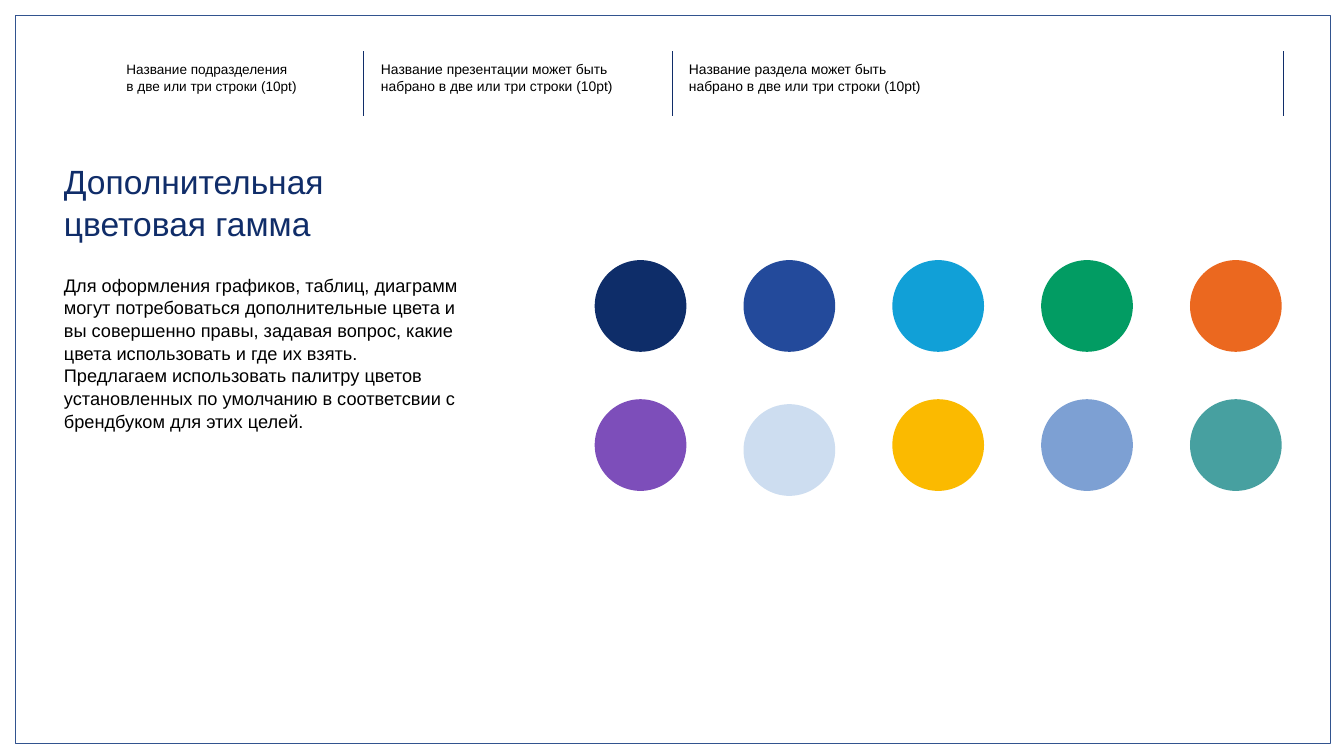
"""Build the slide that shows the extra colour palette."""
from pptx import Presentation
from pptx.dml.color import RGBColor
from pptx.enum.shapes import MSO_CONNECTOR as Link, MSO_SHAPE as Kind
from pptx.oxml.ns import qn
from pptx.util import Cm, Pt
from lxml.etree import SubElement

HUES = {
    "white": "FFFFFF", "black": "000000", "frame": "32538F", "ink": "102D69",
    "navy": "0E2D69", "blue": "234A9B", "sky": "11A0D7", "green": "029C63",
    "orange": "EB681F", "purple": "7D4EBA", "pale": "CDDDF0",
    "yellow": "FBBA00", "steel": "7DA0D3", "teal": "47A0A0",
}
ROWS = [
    ["navy", "blue", "sky", "green", "orange"],
    ["purple", "pale", "yellow", "steel", "teal"],
]
HEADS = [
    (6.12, 2.21, 19.4, "Название подразделения\vв две или три строки (10pt)"),
    (18.95, 3.05, 19.8, "Название презентации может быть набрано в две или три строки (10pt)"),
    (34.47, 3.05, 19.8, "Название раздела может быть набрано в две или три строки (10pt)"),
]
BODY = (
    "Для оформления графиков, таблиц, диаграмм могут потребоваться "
    "дополнительные цвета и вы совершенно правы, задавая вопрос, какие цвета "
    "использовать и где их взять. Предлагаем использовать палитру цветов "
    "установленных по умолчанию в соответсвии с брендбуком для этих целей."
)


class Board:
    """Hold the style and the current slide."""

    def __init__(self, slide, font="Arial", pad=0.25, lead=1.04):
        self.shapes = slide.shapes
        self.font, self.pad, self.lead = font, Cm(pad), lead

    def hue(self, name):
        return RGBColor.from_string(HUES[name])

    def shape(self, kind, x, y, w, h, fill, line=None):
        item = self.shapes.add_shape(kind, Cm(x), Cm(y), Cm(w), Cm(h))
        item.shadow.inherit = False
        item.fill.solid()
        item.fill.fore_color.rgb = self.hue(fill)
        if line:
            item.line.color.rgb = self.hue(line)
            item.line.width = Pt(0.25)
        else:
            item.line.fill.background()

    def rule(self, x, top, end):
        item = self.shapes.add_connector(Link.STRAIGHT, Cm(x), Cm(top), Cm(x), Cm(end))
        item.line.color.rgb = self.hue("ink")
        item.line.width = Pt(0.75)
        SubElement(item._element.spPr, qn("a:effectLst"))

    def text(self, x, y, w, h, words, size, hue="black"):
        frame = self.shapes.add_textbox(Cm(x), Cm(y), Cm(w), Cm(h)).text_frame
        frame.word_wrap = True
        frame.margin_left = frame.margin_right = self.pad
        frame.margin_top = frame.margin_bottom = self.pad
        frame.text = words
        para = frame.paragraphs[0]
        para.line_spacing = self.lead
        for run in para.runs:
            run.font.name = self.font
            run.font.size = Pt(size)
            run.font.color.rgb = self.hue(hue)


def main():
    deck = Presentation()
    deck.slide_width, deck.slide_height = Cm(67.73), Cm(38.1)
    board = Board(deck.slides.add_slide(deck.slide_layouts[6]))

    board.shape(Kind.RECTANGLE, 0.74, 0.76, 66.27, 36.68, "white", "frame")
    for x in (18.31, 33.88, 64.69):
        board.rule(x, 2.59, 5.84)
    for x, h, size, words in HEADS:
        board.text(x, 2.77, 12.52, h, words, size)

    board.text(2.97, 7.77, 18.85, 4.6, "Дополнительная\vцветовая гамма", 48, "ink")
    for row, names in enumerate(ROWS):
        for col, name in enumerate(names):
            drop = 0.25 if name == "pale" else 0
            x, y = 29.97 + 7.5 * col, 13.11 + 7.01 * row + drop
            board.shape(Kind.OVAL, x, y, 4.62, 4.62, name)
    board.text(2.97, 13.51, 20.55, 9.25, BODY, 26)

    deck.save("out.pptx")


if __name__ == "__main__":
    main()
